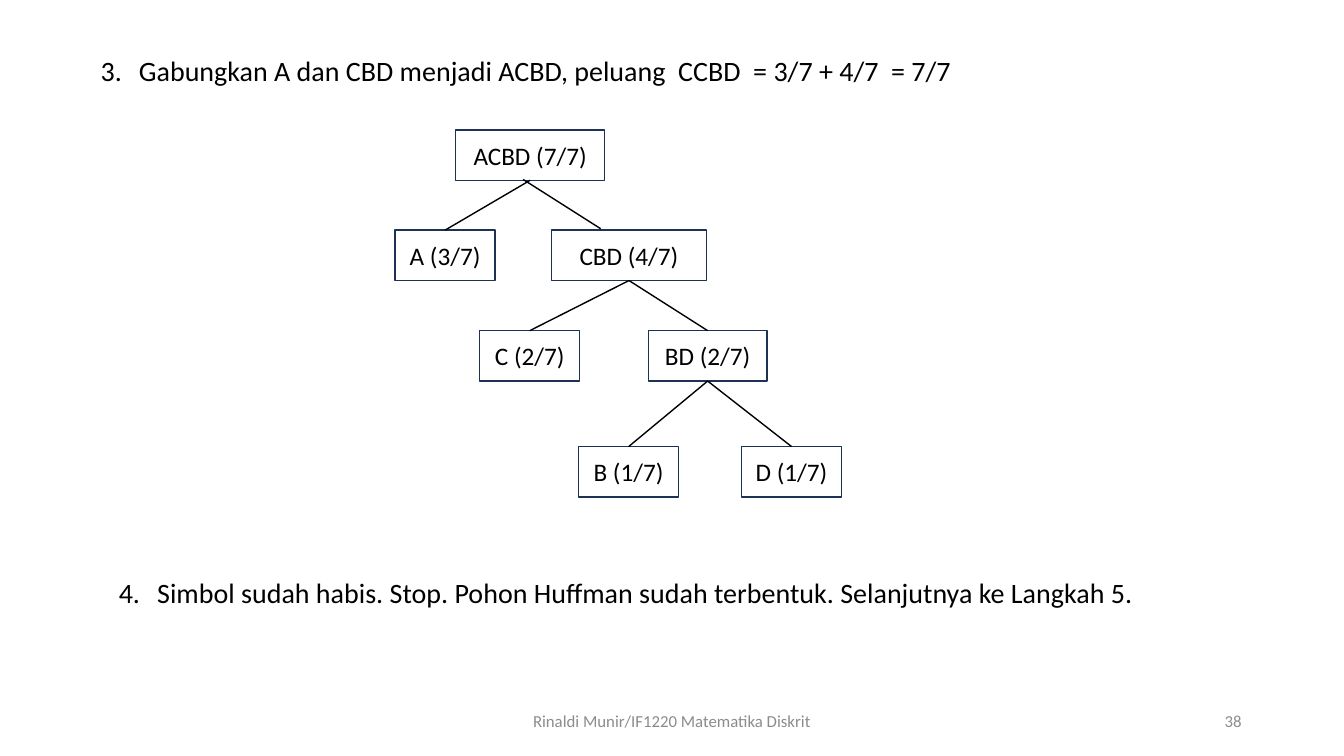
from pptx import Presentation
from pptx.dml.color import RGBColor
from pptx.enum.shapes import MSO_CONNECTOR, MSO_SHAPE
from pptx.enum.text import MSO_ANCHOR, MSO_AUTO_SIZE, PP_ALIGN
from pptx.oxml.ns import qn
from pptx.util import Pt
from lxml import etree

RECTANGLE = MSO_SHAPE.RECTANGLE
STRAIGHT = MSO_CONNECTOR.STRAIGHT
MIDDLE, TOP = MSO_ANCHOR.MIDDLE, MSO_ANCHOR.TOP
LEFT, CENTER, RIGHT = PP_ALIGN.LEFT, PP_ALIGN.CENTER, PP_ALIGN.RIGHT
GROW = MSO_AUTO_SIZE.SHAPE_TO_FIT_TEXT
BOTTOM_SIDE, TOP_SIDE = 2, 0

COLORS = {"text": "000000", "footer": "8C8C8C", "border": "1E3256"}
NODE_HEIGHT = 36
HANGING = 27.4


class TreeSlide:
    font = "Calibri"

    def __init__(self, slide):
        self.shapes = slide.shapes

    def color(self, name):
        return RGBColor.from_string(COLORS[name])

    def fill_text(self, frame, text, size, color, align, anchor):
        frame.word_wrap = True
        frame.vertical_anchor = anchor
        paragraph = frame.paragraphs[0]
        paragraph.text = text
        paragraph.alignment = align
        for run in paragraph.runs:
            run.font.name = self.font
            run.font.size = Pt(size)
            run.font.color.rgb = self.color(color)
        return paragraph

    def text(self, text, left, top, width, height, size, color="text",
             align=LEFT, anchor=TOP):
        box = self.shapes.add_textbox(Pt(left), Pt(top), Pt(width), Pt(height))
        return box, self.fill_text(box.text_frame, text, size, color, align, anchor)

    def step(self, number, text, left, top):
        box, paragraph = self.text(f"{number}.\t{text}", left, top, 770.4, 31.5, 20)
        box.text_frame.auto_size = GROW
        properties = paragraph._p.get_or_add_pPr()
        properties.set("marL", str(Pt(HANGING)))
        properties.set("indent", str(-Pt(HANGING)))

    def footer(self, text, left, width, align):
        self.text(text, left, 500.5, width, 28.75, 12, "footer", align, MIDDLE)

    def node(self, label, left, top, width):
        node = self.shapes.add_shape(
            RECTANGLE, Pt(left), Pt(top), Pt(width), Pt(NODE_HEIGHT))
        node.shadow.inherit = False
        node.fill.background()
        node.line.color.rgb = self.color("border")
        node.line.width = Pt(1)
        self.fill_text(node.text_frame, label, 18, "text", CENTER, MIDDLE)
        return node

    def line(self, x1=0, y1=0, x2=0, y2=0):
        line = self.shapes.add_connector(STRAIGHT, Pt(x1), Pt(y1), Pt(x2), Pt(y2))
        line.line.color.rgb = self.color("text")
        line.line.width = Pt(1)
        etree.SubElement(line._element.spPr, qn("a:effectLst"))
        return line

    def branch(self, parent, child):
        branch = self.line()
        branch.begin_connect(parent, BOTTOM_SIDE)
        branch.end_connect(child, TOP_SIDE)


def main():
    prs = Presentation()
    prs.slide_width, prs.slide_height = Pt(960), Pt(540)
    page = TreeSlide(prs.slides.add_slide(prs.slide_layouts[6]))

    # Steps
    page.step(3, "Gabungkan A dan CBD menjadi ACBD, peluang  CCBD  = 3/7 + 4/7  = 7/7",
              64.8, 34.6)
    page.step(4, "Simbol sudah habis. Stop. Pohon Huffman sudah terbentuk. "
                 "Selanjutnya ke Langkah 5.", 77.8, 407.5)

    # Huffman tree nodes: symbol, probability, left, top, width
    tree = [
        ("ACBD", "7/7", 325.4, 92.8, 106.6),
        ("A", "3/7", 282.2, 164.4, 71.5),
        ("CBD", "4/7", 393.8, 164.4, 111),
        ("C", "2/7", 342.7, 236.2, 71.5),
        ("BD", "2/7", 463, 236.2, 85),
        ("B", "1/7", 413.3, 319, 71.5),
        ("D", "1/7", 529.7, 319, 71.5),
    ]
    nodes = {symbol: page.node(f"{symbol} ({chance})", left, top, width)
             for symbol, chance, left, top, width in tree}

    # Branches; the one to CBD ends beside the middle of its node
    for parent, child in [("ACBD", "A"), ("CBD", "C"), ("CBD", "BD"),
                          ("BD", "B"), ("BD", "D")]:
        page.branch(nodes[parent], nodes[child])
    page.line(373.7, 128.2, 429.1, 163.4)

    # Footer
    page.footer("Rinaldi Munir/IF1220 Matematika Diskrit", 318, 324, CENTER)
    page.footer("38", 678, 216, RIGHT)

    prs.save("out.pptx")


if __name__ == "__main__":
    main()
